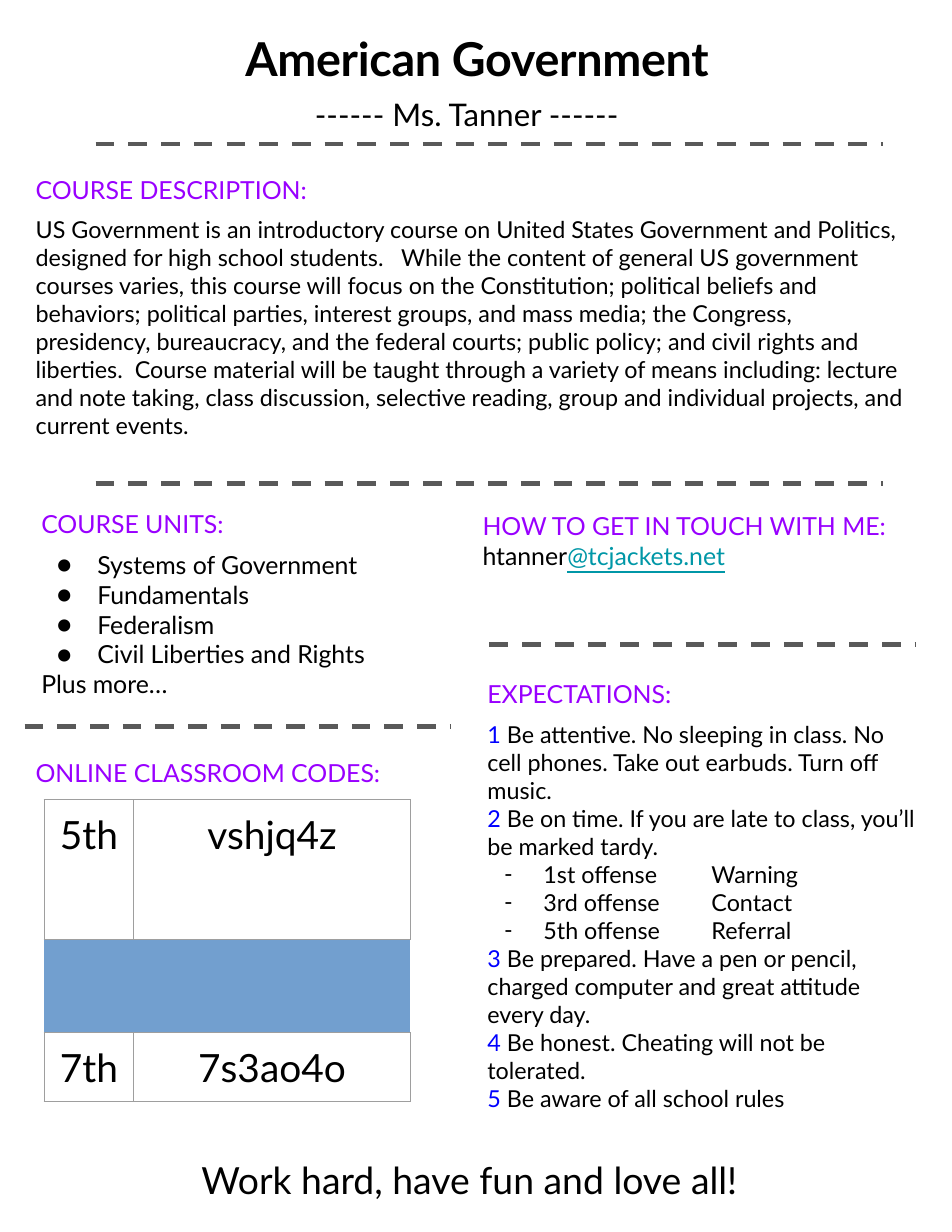
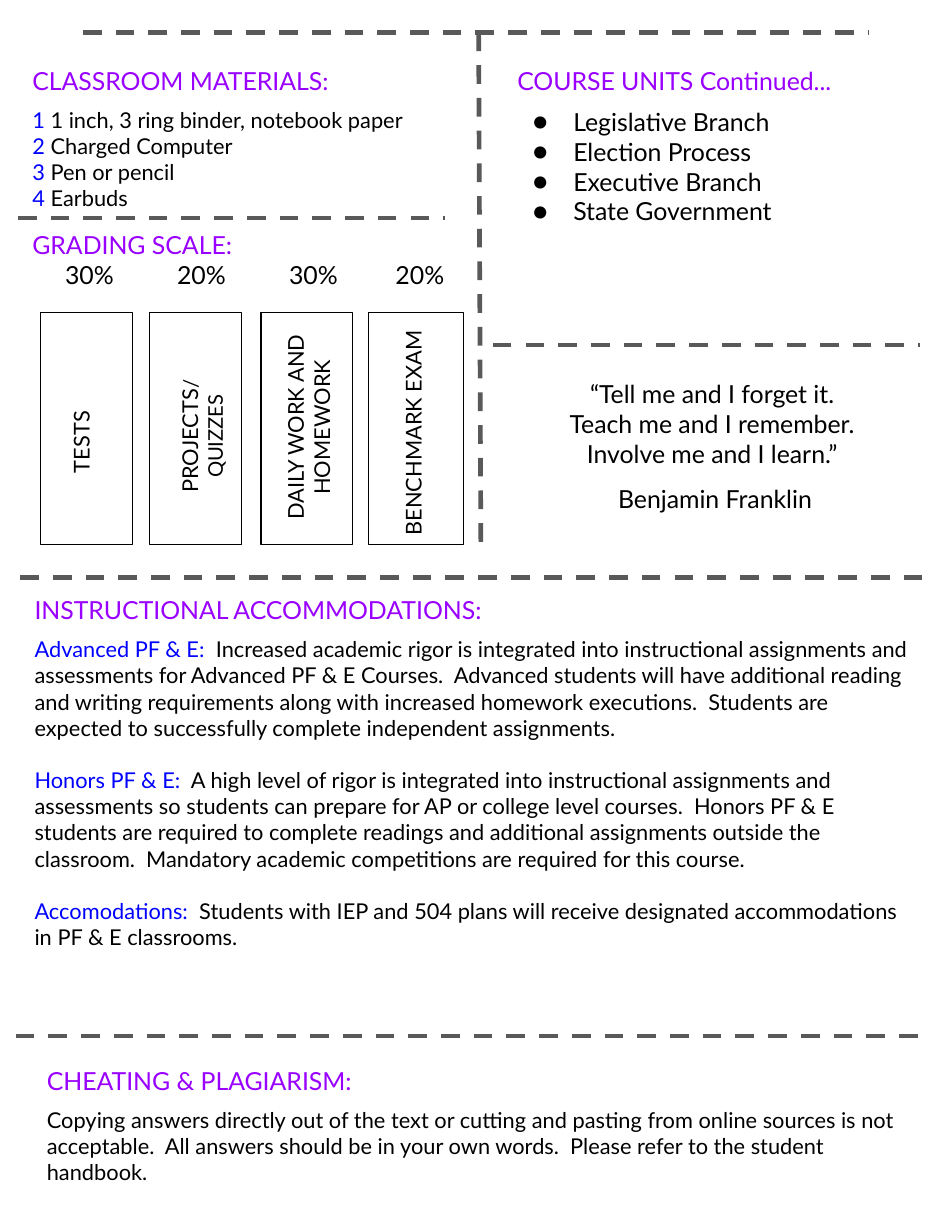
import pptx
import pptx.dml.color
import pptx.enum.dml
import pptx.enum.shapes
import pptx.enum.text
import pptx.oxml
import pptx.oxml.ns
import pptx.util
from lxml import etree

BLACK = pptx.dml.color.RGBColor(0x00, 0x00, 0x00)
PURPLE = pptx.dml.color.RGBColor(0x99, 0x00, 0xFF)
BLUE = pptx.dml.color.RGBColor(0x00, 0x00, 0xFF)
TEAL = pptx.dml.color.RGBColor(0x00, 0x97, 0xA7)
DASH_GRAY = pptx.dml.color.RGBColor(0x59, 0x59, 0x59)
BAND_BLUE = pptx.dml.color.RGBColor(0x72, 0x9F, 0xCF)
CELL_BORDER = "9E9E9E"
NO_TABLE_STYLE = "{2D5ABB26-0587-4C30-8999-92F81FD0307C}"
FONT = "Lato"
WIDTH, HEIGHT = pptx.util.Inches(8.5), pptx.util.Inches(11)
COLUMNS, ROWS = 85, 110
CENTER = pptx.enum.text.PP_ALIGN.CENTER
BOTTOM = pptx.enum.text.MSO_ANCHOR.BOTTOM
HEADING_GAP = 7.2


def add_element(parent, tag, **attributes):
    """Append a drawing element with the given attributes."""
    return etree.SubElement(parent, pptx.oxml.ns.qn(tag), attributes)


def add_text(paragraph, text, size=16, color=BLACK, bold=False, underline=False,
             spacing=0):
    """Add a formatted run to a paragraph."""
    run = paragraph.add_run()
    run.text = text
    run.font.name = FONT
    run.font.size = pptx.util.Pt(size)
    run.font.color.rgb = color
    run.font.bold = bold
    run.font.underline = underline
    if spacing:
        run._r.get_or_add_rPr().set("spc", str(spacing))


def line(*runs, **layout):
    """Describe a paragraph: runs as text or (text, format), plus its layout."""
    return runs, layout


def numbered(items, first=1):
    """Describe paragraphs that open with a blue number."""
    return [line((f"{number} ", {"color": BLUE}), item)
            for number, item in enumerate(items, first)]


def bulleted(items, mark="●", indent=0.36):
    """Describe paragraphs with a hanging bullet."""
    return [line(item, mark=mark, indent=indent, inset=0.5) for item in items]


class Page:
    """Holds the grid, the style and the current slide."""

    def __init__(self, presentation):
        """Add a blank slide."""
        self.slide = presentation.slides.add_slide(presentation.slide_layouts[6])
        self.shapes = self.slide.shapes

    def place(self, left, top, *extent):
        """Turn grid columns and rows into slide lengths."""
        steps = (WIDTH / COLUMNS, HEIGHT / ROWS)
        return [round(value * steps[index % 2])
                for index, value in enumerate((left, top) + extent)]

    def text(self, box, lines, size=16, align=None, anchor=None, rotation=0):
        """Add a wrapped text box."""
        shape = self.shapes.add_textbox(*self.place(*box))
        shape.rotation = rotation
        frame = shape.text_frame
        frame.word_wrap = True
        frame.vertical_anchor = anchor
        frame.margin_left = frame.margin_right = pptx.util.Inches(0.1)
        frame.margin_top = frame.margin_bottom = pptx.util.Inches(0.1)
        for index, (runs, layout) in enumerate(lines):
            paragraph = frame.add_paragraph() if index else frame.paragraphs[0]
            self.arrange(paragraph, align=align, **layout)
            for run in runs:
                text, form = (run, {}) if isinstance(run, str) else run
                add_text(paragraph, text, **{"size": size, **form})

    def arrange(self, paragraph, align=None, before=0, mark=None, indent=0, inset=0,
                tabs=()):
        """Set alignment, space, bullet and centred tabs of a paragraph."""
        properties = paragraph._p.get_or_add_pPr()
        if inset:
            properties.set("marL", str(pptx.util.Inches(inset)))
            properties.set("indent", str(-pptx.util.Inches(indent)))
        if mark:
            color = add_element(properties, "a:buClr")
            add_element(color, "a:srgbClr", val=str(BLACK))
            add_element(properties, "a:buFont", typeface=FONT)
            add_element(properties, "a:buChar", char=mark)
        if tabs:
            stops = add_element(properties, "a:tabLst")
            for stop in tabs:
                add_element(stops, "a:tab", pos=str(pptx.util.Inches(stop)), algn="ctr")
        paragraph.alignment = align
        if before:
            paragraph.space_before = pptx.util.Pt(before)

    def section(self, box, heading, lines=(), size=16, gap=HEADING_GAP):
        """Add a purple heading with its body below."""
        body = [(runs, {**layout, "before": gap} if index == 0 else layout)
                for index, (runs, layout) in enumerate(lines)]
        title = line((heading, {"size": 16, "color": PURPLE}))
        self.text(box, [title] + body, size=size)

    def divider(self, left, top, right, bottom=None):
        """Add a dashed divider, level unless a bottom is given."""
        ends = self.place(left, top, right, top if bottom is None else bottom)
        connector = self.shapes.add_connector(
            pptx.enum.shapes.MSO_CONNECTOR.STRAIGHT, *ends)
        connector.line.color.rgb = DASH_GRAY
        connector.line.width = pptx.util.Pt(3)
        connector.line.dash_style = pptx.enum.dml.MSO_LINE.DASH
        add_element(connector._element.spPr, "a:effectLst")

    def bar(self, box):
        """Add an outlined rectangle."""
        shape = self.shapes.add_shape(
            pptx.enum.shapes.MSO_SHAPE.RECTANGLE, *self.place(*box))
        shape.shadow.inherit = False
        shape.fill.background()
        shape.line.color.rgb = BLACK
        shape.line.width = pptx.util.Pt(0.75)

    def table(self, box, widths, heights, entries, span):
        """Add a bordered table whose entries each span several rows."""
        frame = self.shapes.add_table(len(heights), len(widths), *self.place(*box))
        table = frame.table
        table.first_row = table.horz_banding = False
        table._tbl.tblPr.find(pptx.oxml.ns.qn("a:tableStyleId")).text = NO_TABLE_STYLE
        for column, width in zip(table.columns, widths):
            column.width = self.place(width, 0)[0]
        for row, height in zip(table.rows, heights):
            row.height = self.place(0, height)[1]
        for cell in table.iter_cells():
            cell.fill.solid()
            cell.fill.fore_color.rgb = BAND_BLUE
        for index, texts in enumerate(entries):
            for column, text in enumerate(texts):
                cell = table.cell(index * span, column)
                cell.merge(table.cell(index * span + span - 1, column))
                self.cell(cell, text, BOTTOM if index else None)

    def cell(self, cell, text, anchor):
        """Write a centred table cell with thin borders."""
        cell.margin_left = cell.margin_right = pptx.util.Inches(0.1)
        cell.margin_top = cell.margin_bottom = pptx.util.Inches(0.1)
        cell.vertical_anchor = anchor
        paragraph = cell.text_frame.paragraphs[0]
        paragraph.alignment = CENTER
        add_text(paragraph, text, size=25)
        cell.fill.background()
        properties = cell._tc.get_or_add_tcPr()
        for index, side in enumerate(("a:lnL", "a:lnR", "a:lnT", "a:lnB")):
            border = add_element(properties, side, w=str(pptx.util.Pt(0.75)))
            fill = add_element(border, "a:solidFill")
            add_element(fill, "a:srgbClr", val=CELL_BORDER)
            properties.insert(index, border)


def build_overview(page):
    """Build the course overview."""
    page.text((3, 0, 79.2, 8.7),
              [line(("American Government", {"bold": True, "spacing": -20}))],
              size=30, align=CENTER, anchor=BOTTOM)
    page.text((5.92, 7.5, 71.5, 8.7), [line("------ Ms. Tanner ------")],
              size=20, align=CENTER)
    for divider in ((8.54, 12.86, 78.8), (8.54, 43.2, 78.8),
                    (43.7, 57.56, 81.8), (2.2, 64.84, 40.3)):
        page.divider(*divider)
    page.section((2.2, 14.56, 80.2, 26.9), "COURSE DESCRIPTION:", [line(
        "US Government is an introductory course on United States Government and "
        "Politics, designed for high school students.   While the content of general "
        "US government courses varies, this course will focus on the Constitution; "
        "political beliefs and behaviors; political parties, interest groups, and mass "
        "media; the Congress, presidency, bureaucracy, and the federal courts; public "
        "policy; and civil rights and liberties.  Course material will be taught "
        "through a variety of means including: lecture and note taking, class "
        "discussion, selective reading, group and individual projects, and current "
        "events.")], size=15)
    page.section((2.7, 44.4, 38.5, 19.2), "COURSE UNITS:", bulleted([
        "Systems of Government", "Fundamentals", "Federalism",
        "Civil Liberties and Rights"]) + [line("Plus more…")])
    page.section((42.1, 44.6, 41.2, 12), "HOW TO GET IN TOUCH WITH ME:", [line(
        "htanner", ("@tcjackets.net", {"color": TEAL, "underline": True}))], gap=0)
    offenses = bulleted(["1st offense\tWarning", "3rd offense\tContact",
                         "5th offense\tReferral"], mark="-", indent=0.35)
    page.section((42.54, 59.62, 40.3, 42.2), "EXPECTATIONS:", numbered([
        "Be attentive. No sleeping in class. No cell phones. Take out earbuds. "
        "Turn off music.",
        "Be on time. If you are late to class, you’ll be marked tardy."])
        + offenses + numbered([
            "Be prepared. Have a pen or pencil, charged computer and great attitude "
            "every day.",
            "Be honest. Cheating will not be tolerated.",
            "Be aware of all school rules"], first=3), size=15)
    page.section((2.2, 66.66, 36.1, 14.6), "ONLINE CLASSROOM CODES:")
    page.table((3.94, 71.4, 32.7, 27), (8, 24.7), [4.16] * 5 + [6.2],
               (("5th", "vshjq4z"), ("7th", "7s3ao4o")), span=3)
    page.text((3.3, 102.3, 77.2, 5.5), [line("Work hard, have fun and love all!")],
              size=24, align=CENTER)


def build_policies(page):
    """Build the materials, grading and policies."""
    for divider in ((7.4, 2.9, 77.6), (42.74, 2.9, 42.94, 49.3), (1.6, 19.46, 39.7),
                    (44, 30.8, 82.1), (1.8, 51.56, 82.5), (1.4, 92.5, 82.1)):
        page.divider(*divider)
    page.section((1.9, 4.84, 38.5, 26.4), "CLASSROOM MATERIALS:", numbered([
        "1 inch, 3 ring binder, notebook paper", "Charged Computer",
        "Pen or pencil", "Earbuds"]), size=14)
    page.section((45.2, 4.84, 38.5, 16.5), "COURSE UNITS Continued...", bulleted([
        "Legislative Branch", "Election Process", "Executive Branch",
        "State Government"]))
    page.section((1.9, 19.5, 40.8, 10.3), "GRADING SCALE:", [line(
        "\t30%\t20%\t30%\t20%", tabs=(0.51, 1.51, 2.51, 3.46))], gap=0)
    for left, width in ((3.6, 8.2), (13.34, 8.2), (23.3, 8.2), (32.92, 8.5)):
        page.bar((left, 27.9, width, 20.7))
    projects = [line("PROJECTS", ("/", {"size": 13})), line(("QUIZZES", {"size": 13}))]
    for box, lines, align in (
            ((-2.6, 36.06, 22.1, 6.8), [line("TESTS")], CENTER),
            ((9.4, 35.2, 18.2, 7.5), projects, CENTER),
            ((15.4, 34.64, 24.6, 7), [line("DAILY WORK AND HOMEWORK")], CENTER),
            ((27.5, 34.6, 21.4, 7), [line("BENCHMARK EXAM")], None)):
        page.text(box, lines, size=14, align=align, rotation=270)
    page.text((45.1, 32.8, 37, 14.6), [
        line("“Tell me and I forget it."), line("Teach me and I remember."),
        line("Involve me and I learn.”"),
        line("Benjamin Franklin", before=10, inset=0.05)], align=CENTER)
    accommodations = (
        ("Advanced PF & E:", "  Increased academic rigor is integrated into "
         "instructional assignments and assessments for Advanced PF & E Courses.  "
         "Advanced students will have additional reading and writing requirements "
         "along with increased homework executions.  Students are expected to "
         "successfully complete independent assignments."),
        ("Honors PF & E:", "  A high level of rigor is integrated into instructional "
         "assignments and assessments so students can prepare for AP or college level "
         "courses.  Honors PF & E students are required to complete readings and "
         "additional assignments outside the classroom.  Mandatory academic "
         "competitions are required for this course."),
        ("Accomodations:", "  Students with IEP and 504 plans will receive designated "
         "accommodations in PF & E classrooms."))
    page.section((2.1, 52.13, 80.2, 34.6), "INSTRUCTIONAL ACCOMMODATIONS:", [
        line((label, {"color": BLUE}), text, before=16.8)
        for label, text in accommodations], size=14)
    page.section((3.2, 94.14, 78, 12.8), "CHEATING & PLAGIARISM:", [line(
        "Copying answers directly out of the text or cutting and pasting from online "
        "sources is not acceptable.  All answers should be in your own words.  Please "
        "refer to the student handbook.")], size=14)


def main():
    """Build and save the syllabus."""
    presentation = pptx.Presentation()
    presentation.slide_width, presentation.slide_height = WIDTH, HEIGHT
    build_overview(Page(presentation))
    build_policies(Page(presentation))
    presentation.save("out.pptx")


if __name__ == "__main__":
    main()
